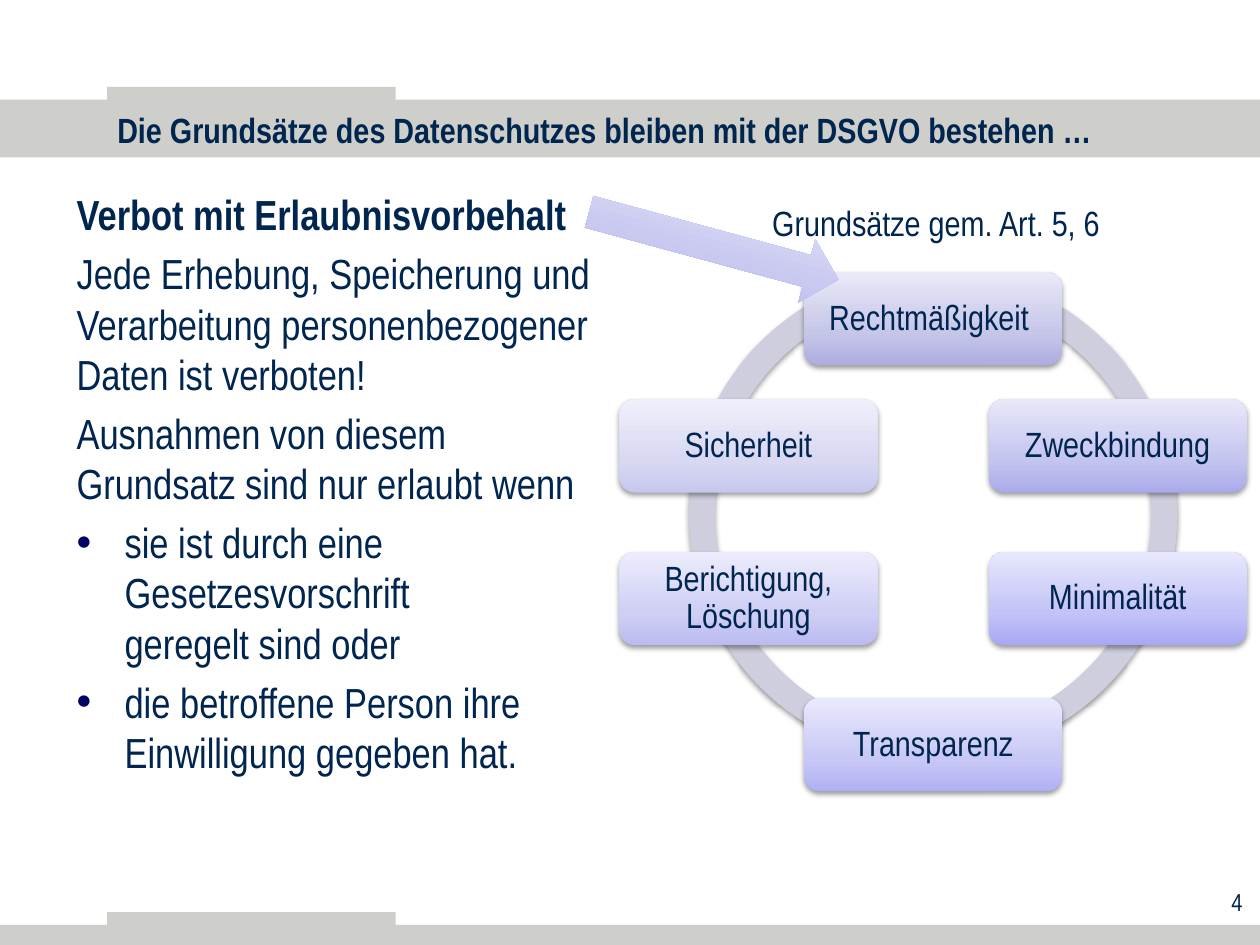
from lxml.etree import SubElement
from pptx import Presentation
from pptx.dml.color import RGBColor
from pptx.enum.shapes import MSO_SHAPE as Shape
from pptx.enum.text import MSO_ANCHOR as Anchor, MSO_AUTO_SIZE as AutoSize, PP_ALIGN as Align
from pptx.oxml import parse_xml
from pptx.oxml.ns import nsdecls, qn
from pptx.util import Pt

# Content
TITLE = "Die Grundsätze des Datenschutzes bleiben mit der DSGVO bestehen …"
BODY = [  # text, bold, bulleted
    ("Verbot mit Erlaubnisvorbehalt", True, False),
    ("Jede Erhebung, Speicherung und Verarbeitung personenbezogener Daten ist verboten!",
     False, False),
    ("Ausnahmen von diesem Grundsatz sind nur erlaubt wenn", False, False),
    ("sie ist durch eine Gesetzesvorschrift \ngeregelt sind oder", False, True),
    ("die betroffene Person ihre Einwilligung gegeben hat.", False, True),
]
CAPTION = "Grundsätze gem. Art. 5, 6"
PAGE_NUMBER = "4"
PRINCIPLES = [  # text, column (-1 left, 0 middle, 1 right), row, gradient
    ("Rechtmäßigkeit ", 0, 0, ("ADADE1", "C6C6E9", "E9E9F7")),
    ("Zweckbindung", 1, 1, ("AAAAEB", "C4C4F0", "E8E8FA")),
    ("Minimalität", 1, 2, ("A8A8F5", "C3C3F7", "E7E7FD")),
    ("Transparenz", 0, 3, ("B0B0F4", "C8C8F6", "E9E9FD")),
    ("Berichtigung, Löschung", -1, 2, ("BBBBF1", "CFCFF5", "ECECFC")),
    ("Sicherheit", -1, 1, ("C8C8EF", "D8D8F3", "EFEFFB")),
]
ARROW_GRADIENT = ("A9A9E9", "C4C4EF", "E8E8FA")
COLORS = {"text": "00254F", "bar": "CECFCB", "ring": "CECEDE",
          "bullet": "000066", "shadow": "000000"}
FONT = "Arial Narrow"

# Layout in points
BARS = [(0, 56.9, 720, 33.1), (0, 528.5, 720, 12),
        (61.2, 49.7, 164.9, 9.4), (61.2, 521.3, 164.9, 9.4)]
CENTER_X, CENTER_Y, RING_SIZE = 533.2, 294.1, 300.2
COLUMN_STEP = 105.5
ROW_TOPS = [155.5, 228.2, 315.4, 398.9]
BOX_WIDTH, BOX_HEIGHT = 147.6, 53.3
INDENT = 27.4


def add_run(para, text, size, bold=False):
    run = para.add_run()
    run.text = text
    run.font.name = FONT
    run.font.size = Pt(size)
    run.font.bold = bold
    run.font.color.rgb = RGBColor.from_string(COLORS["text"])


def add_shape(slide, kind, left, top, width, height, color=None):
    shape = slide.shapes.add_shape(kind, Pt(left), Pt(top), Pt(width), Pt(height))
    shape.shadow.inherit = False
    shape.line.fill.background()
    if color:
        shape.fill.solid()
        shape.fill.fore_color.rgb = RGBColor.from_string(color)
    return shape


def add_text_box(slide, left, top, width, height, wrap=True):
    box = slide.shapes.add_textbox(Pt(left), Pt(top), Pt(width), Pt(height))
    box.text_frame.word_wrap = wrap
    return box.text_frame


def fill_gradient(shape, colors):
    """Run three stops from the bottom edge to the top edge."""
    stops = "".join(f'<a:gs pos="{pos}"><a:srgbClr val="{color}"/></a:gs>'
                    for pos, color in zip((0, 35000, 100000), colors))
    gradient = parse_xml(
        f'<a:gradFill {nsdecls("a")} rotWithShape="1"><a:gsLst>{stops}</a:gsLst>'
        '<a:lin ang="16200000" scaled="0"/></a:gradFill>')
    shape.element.spPr.find(qn("a:prstGeom")).addnext(gradient)


def cast_shadow(shape):
    effects = shape.element.spPr.find(qn("a:effectLst"))
    effects.append(parse_xml(
        f'<a:outerShdw {nsdecls("a")} blurRad="{Pt(3.1)}" dist="{Pt(1.6)}" dir="5400000" '
        f'rotWithShape="0"><a:srgbClr val="{COLORS["shadow"]}"><a:alpha val="38000"/>'
        '</a:srgbClr></a:outerShdw>'))


def add_bullet(para):
    props = para._p.get_or_add_pPr()
    props.set("marL", str(Pt(INDENT)))
    props.set("indent", str(-Pt(INDENT)))
    color = SubElement(props, qn("a:buClr"))
    SubElement(color, qn("a:srgbClr")).set("val", COLORS["bullet"])
    SubElement(props, qn("a:buFont")).set("typeface", "Arial")
    SubElement(props, qn("a:buChar")).set("char", "•")


deck = Presentation()
deck.slide_width, deck.slide_height = Pt(720), Pt(540)
slide = deck.slides.add_slide(deck.slide_layouts[5])

# Grey bars, with the title in front of them
for bar in BARS:
    add_shape(slide, Shape.RECTANGLE, *bar, COLORS["bar"])
title = slide.shapes.title
title.element.getparent().append(title.element)
title.left, title.top, title.width, title.height = Pt(59.8), Pt(59), Pt(626.4), Pt(30.2)
frame = title.text_frame
frame.auto_size = AutoSize.NONE
frame.vertical_anchor = Anchor.MIDDLE
frame.paragraphs[0].alignment = Align.LEFT
add_run(frame.paragraphs[0], TITLE, 20, True)

# Ring behind the principles
ring = add_shape(slide, Shape.CIRCULAR_ARROW, CENTER_X - RING_SIZE / 2,
                 CENTER_Y - RING_SIZE / 2, RING_SIZE, RING_SIZE, COLORS["ring"])
for index, value in enumerate((0.05, 3.13, 136.96, 174.46, 0.06)):
    ring.adjustments[index] = value
ring.rotation = 11.2
cast_shadow(ring)

# Principles around the ring
for text, column, row, colors in PRINCIPLES:
    left = CENTER_X + column * COLUMN_STEP - BOX_WIDTH / 2
    box = add_shape(slide, Shape.ROUNDED_RECTANGLE, left, ROW_TOPS[row],
                    BOX_WIDTH, BOX_HEIGHT)
    fill_gradient(box, colors)
    cast_shadow(box)
    frame = box.text_frame
    frame.word_wrap = True
    frame.vertical_anchor = Anchor.MIDDLE
    frame.margin_left = frame.margin_right = Pt(8.4)
    para = frame.paragraphs[0]
    para.alignment = Align.CENTER
    para.line_spacing = 0.9
    add_run(para, text, 20)

# Body text
frame = add_text_box(slide, 36.7, 104.4, 314.6, 409.7)
for index, (text, bold, bulleted) in enumerate(BODY):
    para = frame.add_paragraph() if index else frame.paragraphs[0]
    if bulleted:
        add_bullet(para)
    if index:
        para.space_before = Pt(4.8)
    for number, line in enumerate(text.split("\n")):
        if number:
            para.add_line_break()
        add_run(para, line, 24, bold)

# Page number
para = add_text_box(slide, 557.3, 503.3, 159.8, 31).paragraphs[0]
para.alignment = Align.RIGHT
add_run(para, PAGE_NUMBER, 14)

# Arrow to the ring and its caption
arrow = add_shape(slide, Shape.RIGHT_ARROW, 334.1, 121.7, 147.6, 37.4)
arrow.rotation = 15.2
fill_gradient(arrow, ARROW_GRADIENT)
para = add_text_box(slide, 433.4, 111.6, 203, 31.7, wrap=False).paragraphs[0]
para.alignment = Align.CENTER
add_run(para, CAPTION, 20)

deck.save("out.pptx")
